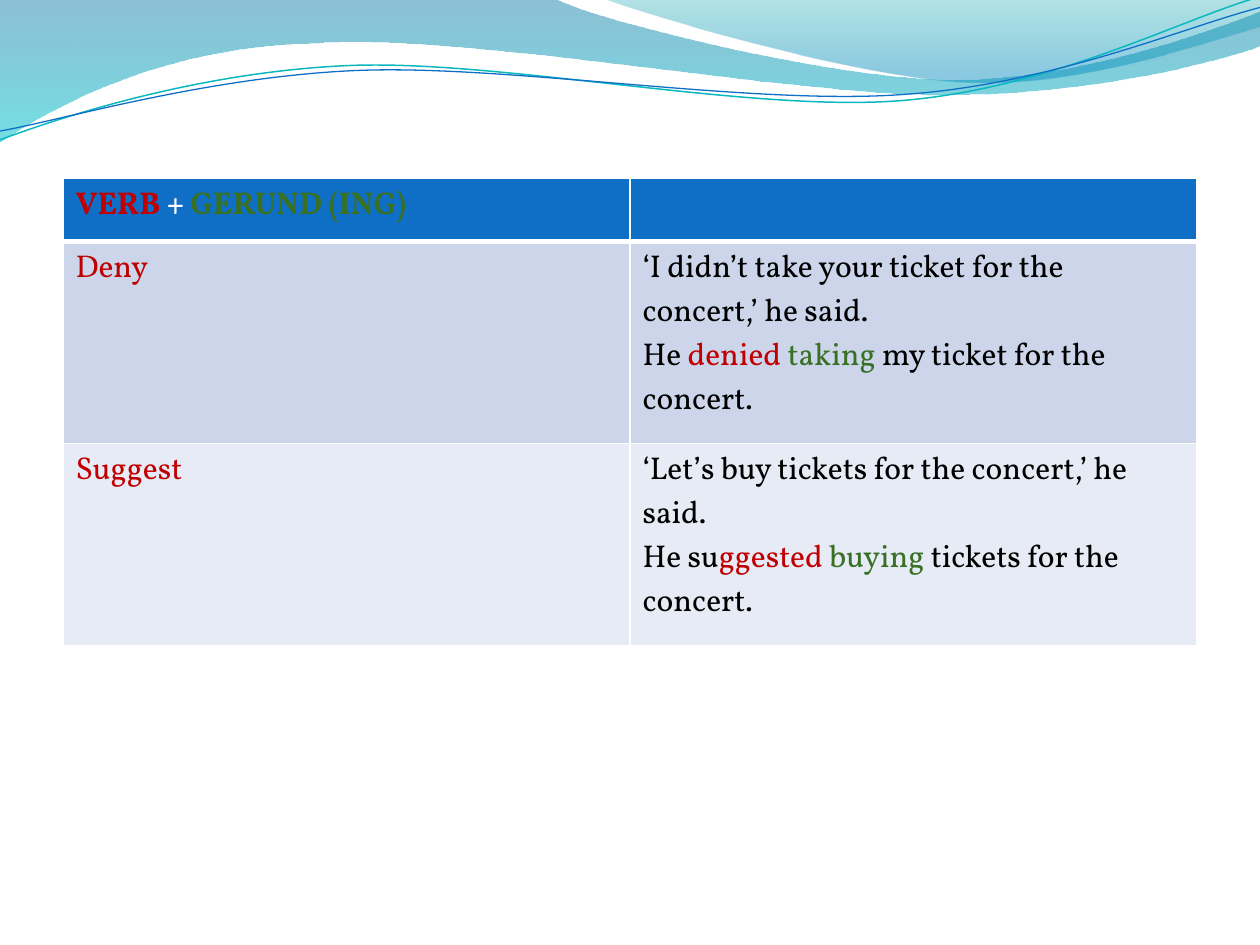
from math import cos, radians, sin

from lxml import etree
from pptx import Presentation
from pptx.dml.color import RGBColor
from pptx.oxml.ns import qn
from pptx.util import Cm, Pt

THEME = {
    "font": "Vollkorn", "size": 18,
    "verb": "C00000", "gerund": "387026", "text": "000000", "light": "FFFFFF",
    "rows": ["0F6FC6", "CCD5EA", "E7EBF5"],
    "border": 1, "header_border": 3,
}

ROWS = [
    [[[("VERB", "verb"), (" + ", "light"), ("GERUND (ING)", "gerund")]], []],
    [
        [[("Deny", "verb")]],
        [
            [("‘I didn’t take your ticket for the concert,’ he said.", "text")],
            [("He ", "text"), ("denied ", "verb"), ("taking ", "gerund"),
             ("my ticket for the concert.", "text")],
        ],
    ],
    [
        [[("Suggest", "verb")]],
        [
            [("‘Let’s buy tickets for the concert,’ he said.", "text")],
            [("He su", "text"), ("ggested ", "verb"), ("buying", "gerund"),
             (" tickets for the concert.", "text")],
        ],
    ],
]
COLUMN_WIDTH = 11.43
ROW_HEIGHTS = [1.27, 4.07, 4.07]
TABLE_LEFT, TABLE_TOP = 1.27, 3.6

UNIT = 2.54
TILT = 2.7
WAVES = [
    {"start": (0, 0), "segments": [
        (4.4, -0.01), (4.76, 0.17, 6.64, 0.63, 7.58, 0.63),
        (8.53, 0.63, 9.58, 0.26, 10, 0.09), (10.01, 0.36),
        (9.83, 0.44, 8.7, 0.76, 7.46, 0.75), (6.22, 0.75, 3.82, 0.28, 2.57, 0.34),
        (1.29, 0.36, 0.46, 0.83, -0.01, 1.13), (0, 0)],
     "stops": [(0, "0074A1", 45), (1, "00C6CF", 55)]},
    {"start": (4.79, -0.01), "segments": [
        (5.09, 0.11, 6.82, 0.62, 7.69, 0.65), (8.56, 0.69, 9.61, 0.32, 10, 0.21),
        (10, 0), (4.79, -0.01)],
     "stops": [(0, "00A1A9", 30), (0.8, "008BBF", 45)]},
    {"start": (0, 1.11), "segments": [
        (0.48, 0.93, 1.58, 0.57, 2.77, 0.52), (3.95, 0.47, 5.93, 0.89, 7.13, 0.8),
        (8.33, 0.71, 9.38, 0.15, 9.98, -0.02)],
     "line": ("0AB8BF", 0.85), "pivot": (4.99, 0.58)},
    {"start": (0, 1.04), "segments": [
        (0.47, 0.96, 1.64, 0.61, 2.83, 0.56), (4.03, 0.51, 5.97, 0.84, 7.17, 0.75),
        (8.36, 0.67, 9.41, 0.21, 10, 0.06)],
     "line": ("0F6FC6", 0.75), "pivot": (5, 0.59)},
]


def turn(point, pivot):
    x, y = point[0] - pivot[0], point[1] - pivot[1]
    cosine, sine = cos(radians(TILT)), sin(radians(TILT))
    return pivot[0] + x * cosine - y * sine, pivot[1] + x * sine + y * cosine


def bend_segments(shape, segments):
    lines = iter(list(shape._element.iter(qn("a:lnTo"))))
    for segment in segments:
        group = [next(lines) for _ in range(len(segment) // 2)]
        if len(group) == 3:
            curve = etree.Element(qn("a:cubicBezTo"))
            group[0].addprevious(curve)
            for line in group:
                curve.append(line[0])
                line.getparent().remove(line)


def add_wave(page, wave):
    points = [wave["start"]]
    for segment in wave["segments"]:
        points += zip(segment[::2], segment[1::2])
    if "pivot" in wave:
        points = [turn(point, wave["pivot"]) for point in points]
    points = [(Cm(x * UNIT), Cm(y * UNIT)) for x, y in points]
    builder = page.shapes.build_freeform(*points[0], scale=1.0)
    builder.add_line_segments(points[1:], close="stops" in wave)
    shape = builder.convert_to_shape()
    bend_segments(shape, wave["segments"])
    shape.shadow.inherit = False
    if "line" in wave:
        color, width = wave["line"]
        shape.rotation = 360 - TILT
        shape.fill.background()
        shape.line.color.rgb = RGBColor.from_string(color)
        shape.line.width = Pt(width)
        return
    shape.line.fill.background()
    shape.fill.gradient()
    shape.fill.gradient_angle = 270
    for stop, (position, color, _) in zip(shape.fill.gradient_stops, wave["stops"]):
        stop.position = position
        stop.color.rgb = RGBColor.from_string(color)
    colors = list(shape._element.spPr.iter(qn("a:srgbClr")))
    for element, (_, _, opacity) in zip(colors, wave["stops"]):
        etree.SubElement(element, qn("a:alpha"), val=str(opacity * 1000))


def add_text(para, text, color, bold=False):
    span = para.add_run()
    span.text = text
    span.font.name = THEME["font"]
    span.font.size = Pt(THEME["size"])
    span.font.bold = bold
    span.font.color.rgb = RGBColor.from_string(THEME[color])


def set_borders(cell, row):
    widths = {
        "L": THEME["border"], "R": THEME["border"],
        "T": THEME["header_border" if row == 1 else "border"],
        "B": THEME["header_border" if row == 0 else "border"],
    }
    properties = cell._tc.get_or_add_tcPr()
    for index, (side, width) in enumerate(widths.items()):
        line = etree.Element(qn("a:ln" + side), w=str(Pt(width)))
        fill = etree.SubElement(line, qn("a:solidFill"))
        etree.SubElement(fill, qn("a:srgbClr"), val=THEME["light"])
        properties.insert(index, line)


def fill_cell(cell, paragraphs, row):
    cell.fill.solid()
    cell.fill.fore_color.rgb = RGBColor.from_string(THEME["rows"][row])
    set_borders(cell, row)
    for index, spans in enumerate(paragraphs):
        frame = cell.text_frame
        para = frame.add_paragraph() if index else frame.paragraphs[0]
        for text, color in spans:
            add_text(para, text, color, bold=row == 0)


def add_verb_table(page):
    columns = len(ROWS[0])
    table = page.shapes.add_table(
        len(ROWS), columns, Cm(TABLE_LEFT), Cm(TABLE_TOP),
        Cm(COLUMN_WIDTH * columns), Cm(sum(ROW_HEIGHTS))).table
    for row, cells in enumerate(ROWS):
        table.rows[row].height = Cm(ROW_HEIGHTS[row])
        for column, paragraphs in enumerate(cells):
            fill_cell(table.cell(row, column), paragraphs, row)


def main():
    deck = Presentation()
    deck.slide_width, deck.slide_height = Cm(25.4), Cm(19.05)
    page = deck.slides.add_slide(deck.slide_layouts[6])
    for wave in WAVES:
        add_wave(page, wave)
    add_verb_table(page)
    deck.save("out.pptx")


if __name__ == "__main__":
    main()
